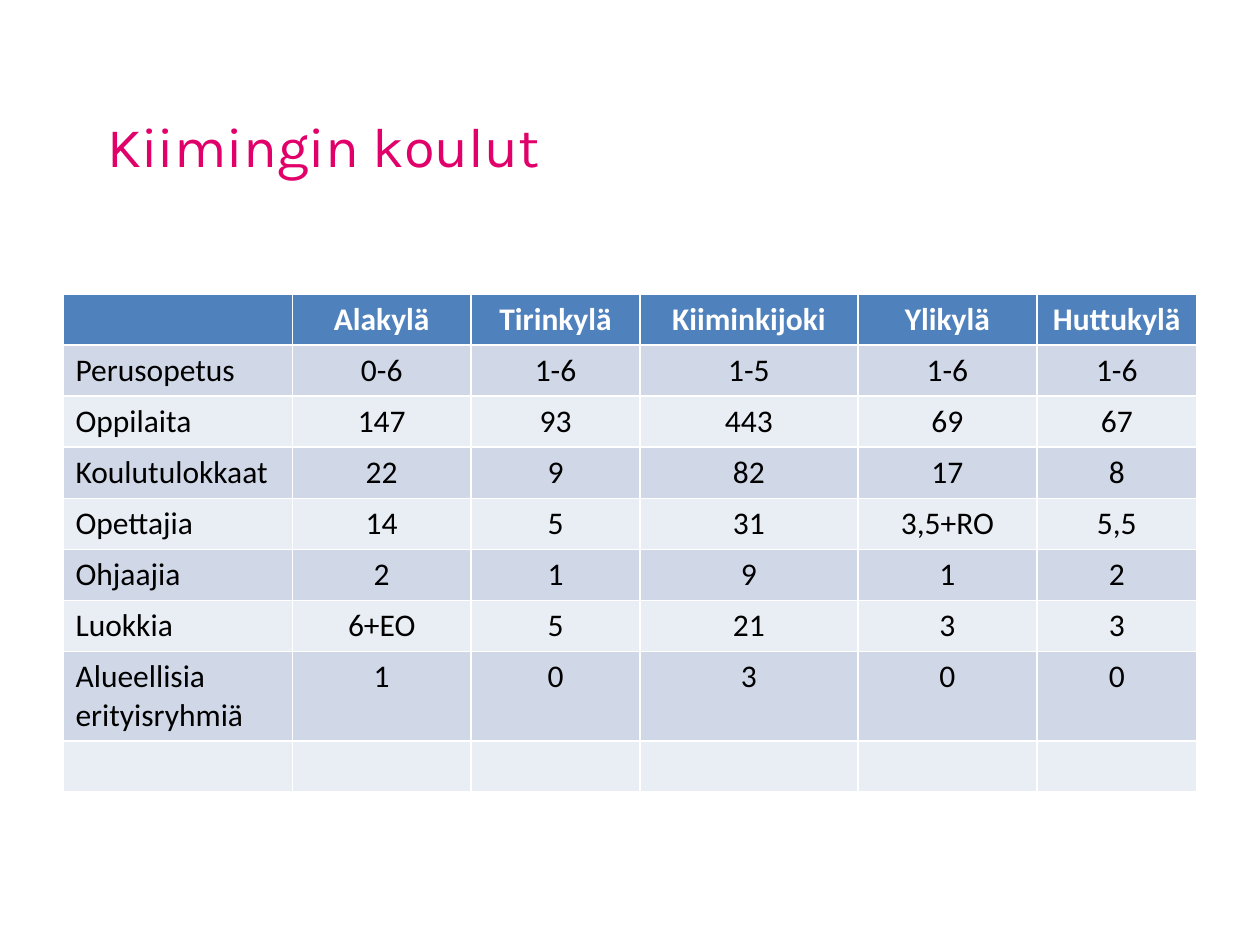
import pptx
import pptx.util
import pptx.dml.color
import pptx.enum.text

Color = pptx.dml.color.RGBColor
Align = pptx.enum.text.PP_ALIGN

PINK = Color(0xE1, 0x00, 0x69)
BLUE = Color(0x4F, 0x81, 0xBD)
BANDS = Color(0xE9, 0xED, 0xF4), Color(0xD0, 0xD8, 0xE8)
WHITE = Color(0xFF, 0xFF, 0xFF)
BLACK = Color(0x00, 0x00, 0x00)

# Column widths in percent of the slide's width
COLS = [18.2, 14.2, 13.4, 17.3, 14.2, 12.7]
ROW = 5.41  # percent of the slide's height

SCHOOLS = [
    ["", "Alakylä", "Tirinkylä", "Kiiminkijoki", "Ylikylä", "Huttukylä"],
    ["Perusopetus", "0-6", "1-6", "1-5", "1-6", "1-6"],
    ["Oppilaita", "147", "93", "443", "69", "67"],
    ["Koulutulokkaat", "22", "9", "82", "17", "8"],
    ["Opettajia", "14", "5", "31", "3,5+RO", "5,5"],
    ["Ohjaajia", "2", "1", "9", "1", "2"],
    ["Luokkia", "6+EO", "5", "21", "3", "3"],
    ["Alueellisia erityisryhmiä", "1", "0", "3", "0", "0"],
    [""] * 6,
]


class Page:
    """One slide, its style, and lengths in percent of its size."""

    def __init__(self, deck):
        self.deck = deck
        self.slide = deck.slides.add_slide(deck.slide_layouts[5])

    def wide(self, share):
        return round(self.deck.slide_width * share / 100)

    def high(self, share):
        return round(self.deck.slide_height * share / 100)

    def style(self, para, face, size, color, align, bold=False):
        para.alignment = align
        font = para.font
        font.name, font.size, font.bold = face, pptx.util.Pt(size), bold
        font.color.rgb = color

    def title(self, text, left, top, width, height):
        shape = self.slide.shapes.title
        shape.left, shape.top = self.wide(left), self.high(top)
        shape.width, shape.height = self.wide(width), self.high(height)
        frame = shape.text_frame
        frame.text = text
        frame.word_wrap = True
        frame.auto_size = pptx.enum.text.MSO_AUTO_SIZE.NONE
        frame.vertical_anchor = pptx.enum.text.MSO_ANCHOR.MIDDLE
        self.style(frame.paragraphs[0], "Karla", 32, PINK, Align.LEFT)

    def table(self, data, left, top):
        """Add a banded table; the table style draws its white borders."""
        grid = self.slide.shapes.add_table(
            len(data), len(COLS), self.wide(left), self.high(top),
            self.wide(sum(COLS)), self.high(ROW * len(data))).table
        for col, share in zip(grid.columns, COLS):
            col.width = self.wide(share)
        for r, line in enumerate(data):
            head = r == 0
            for c, text in enumerate(line):
                cell = grid.cell(r, c)
                cell.text = text
                cell.fill.solid()
                cell.fill.fore_color.rgb = BLUE if head else BANDS[r % 2]
                self.style(cell.text_frame.paragraphs[0], "Calibri", 18,
                           WHITE if head else BLACK,
                           Align.CENTER if c else Align.LEFT, head)


def main():
    deck = pptx.Presentation()
    deck.slide_width = pptx.util.Inches(10)
    deck.slide_height = pptx.util.Inches(7.5)
    page = Page(deck)
    page.title("Kiimingin koulut", 7.5, 6.93, 62.2, 16.8)
    page.table(SCHOOLS, 5, 31.1)
    deck.save("out.pptx")


if __name__ == "__main__":
    main()
